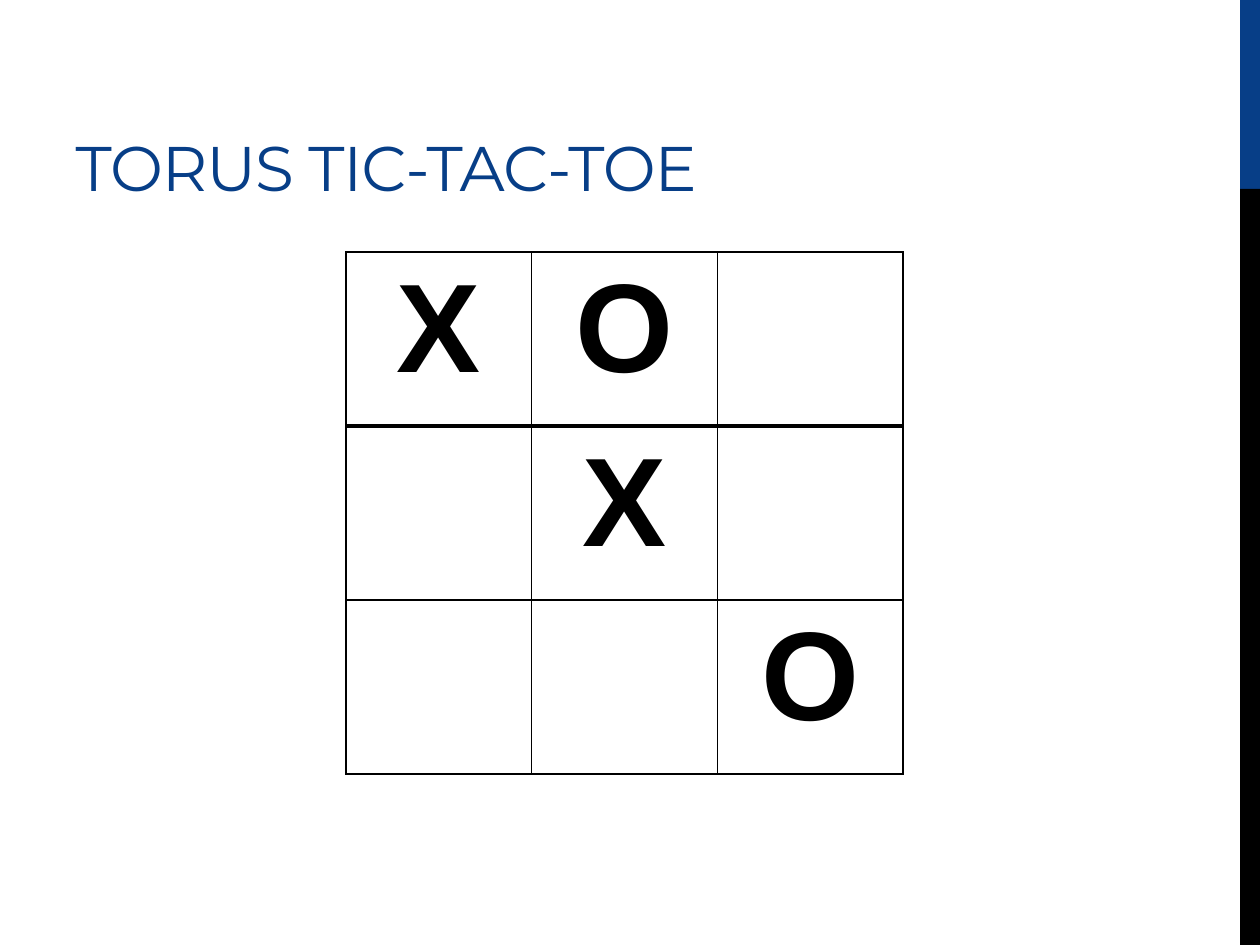
from lxml.etree import SubElement
from pptx import Presentation
from pptx.dml.color import RGBColor
from pptx.enum.shapes import MSO_SHAPE
from pptx.enum.text import MSO_ANCHOR, PP_ALIGN
from pptx.oxml.ns import qn
from pptx.util import Emu, Pt

COLORS = {"blue": "073E87", "black": "000000", "white": "FFFFFF"}


def px(length):
    return Emu(round(length * 914400 / 126))


def add_border(cell, side, points):
    line = SubElement(cell._tc.get_or_add_tcPr(), qn(f"a:{side}"), w=str(Pt(points)))
    fill = SubElement(line, qn("a:solidFill"))
    SubElement(fill, qn("a:srgbClr"), val=COLORS["black"])


prs = Presentation()
prs.slide_width, prs.slide_height = px(1260), px(945)
slide = prs.slides.add_slide(prs.slide_layouts[5])

# Side bands
for top, height, color in [(0, 189, "blue"), (189, 756, "black")]:
    band = slide.shapes.add_shape(
        MSO_SHAPE.RECTANGLE, px(1240), px(top), px(20), px(height))
    band.shadow.inherit = False
    band.fill.solid()
    band.fill.fore_color.rgb = RGBColor.from_string(COLORS[color])
    band.line.fill.background()

# Title
title = slide.shapes.title
title.left, title.top, title.width, title.height = px(63), px(21), px(798), px(189)
title.text_frame.text = "TORUS TIC-TAC-TOE"
title.text_frame.vertical_anchor = MSO_ANCHOR.BOTTOM
heading = title.text_frame.paragraphs[0]
heading.alignment = PP_ALIGN.LEFT
heading.font.size = Pt(36)
heading.font.name = "Montserrat"
heading.font.color.rgb = RGBColor.from_string(COLORS["blue"])
heading.runs[0].font._element.set("spc", "-60")

# Game board
moves = ["XO ", " X ", "  O"]
board = slide.shapes.add_table(3, 3, px(346), px(252), px(557), px(522)).table
board.first_row = board.horz_banding = False
for column in board.columns:
    column.width = px(557 / 3)
for row in board.rows:
    row.height = px(174)

for r, row_moves in enumerate(moves):
    for c, move in enumerate(row_moves):
        square = board.cell(r, c)
        # Borders come before the fill; the line under the first row is heavier
        add_border(square, "lnL", 1)
        add_border(square, "lnR", 1)
        add_border(square, "lnT", 2 if r == 1 else 1)
        add_border(square, "lnB", 2 if r == 0 else 1)
        square.fill.solid()
        square.fill.fore_color.rgb = RGBColor.from_string(COLORS["white"])
        if move == " ":
            continue
        square.text = move
        mark = square.text_frame.paragraphs[0]
        mark.alignment = PP_ALIGN.CENTER
        mark.font.size = Pt(72)
        mark.font.name = "Arial"
        mark.font.bold = True
        mark.font.color.rgb = RGBColor.from_string(COLORS["black"])

prs.save("out.pptx")
